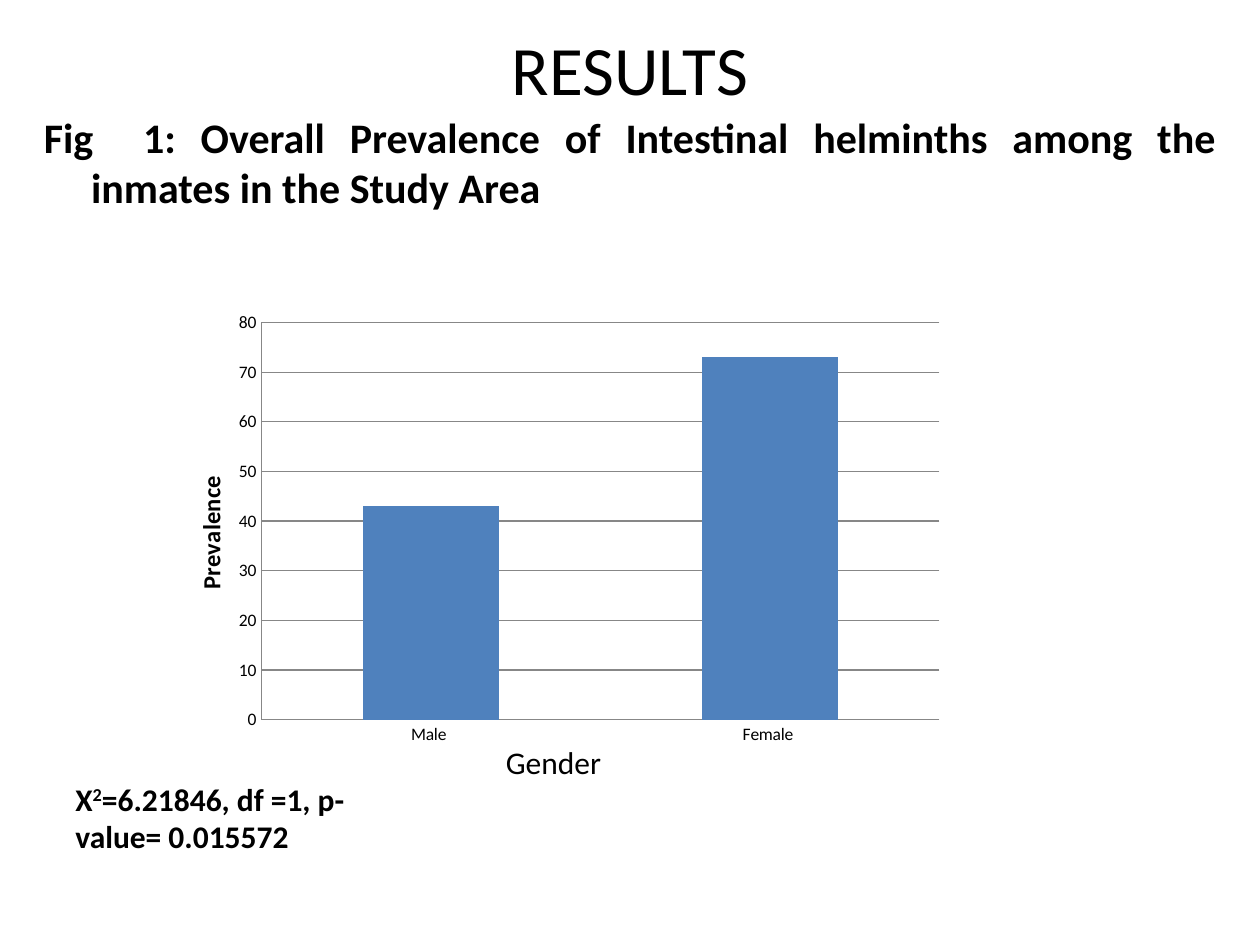
from dataclasses import dataclass

from lxml.etree import SubElement
from pptx import Presentation
from pptx.chart.data import CategoryChartData
from pptx.dml.color import RGBColor
from pptx.enum.chart import XL_CHART_TYPE, XL_TICK_MARK
from pptx.enum.text import MSO_ANCHOR, PP_ALIGN
from pptx.oxml.ns import qn
from pptx.util import Pt


@dataclass(frozen=True)
class Theme:
    font: str = "Calibri"
    ink: RGBColor = RGBColor(0x00, 0x00, 0x00)
    bar: RGBColor = RGBColor(0x4F, 0x81, 0xBD)
    grid: RGBColor = RGBColor(0x87, 0x87, 0x87)
    title: float = 39.6
    caption: float = 24
    note: float = 18
    axis_title: float = 14
    label: float = 10


THEME = Theme()


def apply_format(target, values):
    for name, value in values.items():
        setattr(target, name, value)


def style_font(font, size, bold=False):
    apply_format(font, {"name": THEME.font, "size": Pt(size), "bold": bold})
    font.color.rgb = THEME.ink


def add_text(page, box, words, size, bold=False, frame_format=None, para_format=None):
    """Place one paragraph in the given box and return it."""
    frame = page.shapes.add_textbox(*map(Pt, box)).text_frame
    apply_format(frame, {"word_wrap": True, **(frame_format or {})})
    para = frame.paragraphs[0]
    apply_format(para, para_format or {})
    add_span(para, words, size, bold)
    return para


def add_span(para, words, size, bold=False):
    span = para.add_run()
    span.text = words
    style_font(span.font, size, bold)
    return span


def add_title(page, box):
    add_text(page, box, "RESULTS", THEME.title,
             frame_format={"vertical_anchor": MSO_ANCHOR.MIDDLE},
             para_format={"alignment": PP_ALIGN.CENTER})


def add_caption(page, box):
    para = add_text(
        page, box,
        "Fig  1: Overall Prevalence of Intestinal helminths among the inmates in the Study Area",
        THEME.caption, bold=True,
        para_format={"alignment": PP_ALIGN.JUSTIFY, "space_before": Pt(4.8)})
    # Hanging indent
    properties = para._p.get_or_add_pPr()
    properties.set("marL", str(Pt(27)))
    properties.set("indent", str(Pt(-27)))


def set_layout(layout, values):
    """Fix a chart part at fractions of the chart's size."""
    manual = SubElement(layout, qn("c:manualLayout"))
    for name, value in values.items():
        SubElement(manual, qn(f"c:{name}")).set("val", str(value))


def add_prevalence_chart(page, box):
    data = CategoryChartData()
    data.categories = ["Male ", "Female "]
    data.add_series("Series 1", [43, 73])
    chart = page.shapes.add_chart(
        XL_CHART_TYPE.COLUMN_CLUSTERED, *map(Pt, box), data).chart
    apply_format(chart, {"has_legend": False, "has_title": False})
    style_font(chart.font, THEME.label)

    # Bars
    plot = chart.plots[0]
    apply_format(plot, {"gap_width": 150, "vary_by_categories": False})
    fill = plot.series[0].format.fill
    fill.solid()
    fill.fore_color.rgb = THEME.bar

    # Axes and gridlines
    values = chart.value_axis
    apply_format(values, {"minimum_scale": 0, "maximum_scale": 80, "major_unit": 10,
                          "has_major_gridlines": True})
    for axis in (chart.category_axis, values):
        apply_format(axis, {"major_tick_mark": XL_TICK_MARK.NONE,
                            "minor_tick_mark": XL_TICK_MARK.NONE})
    for part in (chart.category_axis, values, values.major_gridlines):
        part.format.line.color.rgb = THEME.grid
        part.format.line.width = Pt(0.75)

    # Value axis title
    title = values.axis_title
    add_span(title.text_frame.paragraphs[0], "Prevalence", THEME.axis_title, bold=True)
    title_xml = title._element
    set_layout(title_xml.get_or_add_layout() if hasattr(title_xml, "get_or_add_layout")
               else title_xml.find(qn("c:layout")),
               {"xMode": "edge", "yMode": "edge", "x": 0.04, "y": 0.37})

    # Plot area
    area = chart._chartSpace.find(f".//{qn('c:plotArea')}")
    layout = area.find(qn("c:layout"))
    if layout is None:
        layout = SubElement(area, qn("c:layout"))
        area.insert(0, layout)
    set_layout(layout, {"layoutTarget": "inner", "xMode": "edge", "yMode": "edge",
                        "x": 0.13, "y": 0.04, "w": 0.85, "h": 0.88})


def add_test_result(page, box):
    para = add_text(page, box, "X", THEME.note, bold=True)
    exponent = add_span(para, "2", THEME.note, bold=True)
    exponent.font._element.set("baseline", "30000")
    add_span(para, "=6.21846, df =1, p-value= 0.015572", THEME.note, bold=True)


def add_gender_label(page, box):
    add_text(page, box, "Gender", THEME.note)


def main():
    deck = Presentation()
    deck.slide_width, deck.slide_height = Pt(720), Pt(540)
    page = deck.slides.add_slide(deck.slide_layouts[6])
    add_title(page, (36, 12, 648, 54))
    add_caption(page, (18, 60, 684, 456))
    add_prevalence_chart(page, (90, 174, 456, 258))
    add_test_result(page, (36, 442, 210, 72))
    add_gender_label(page, (282, 421, 78, 29))
    deck.save("out.pptx")


if __name__ == "__main__":
    main()
